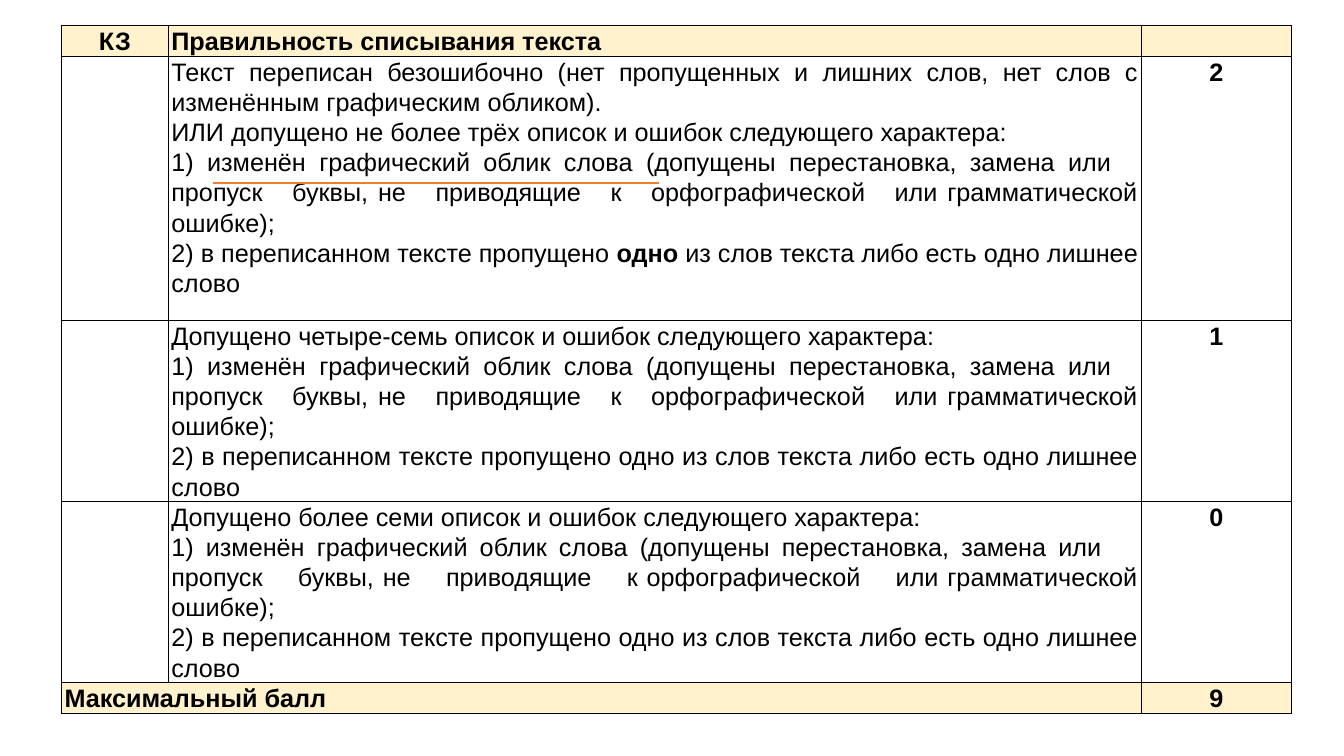
"""Builds a slide with the scoring table for copying a text accurately."""
from dataclasses import dataclass

from lxml.etree import SubElement
from pptx import Presentation
from pptx.dml.color import RGBColor
from pptx.enum.shapes import MSO_CONNECTOR
from pptx.enum.text import PP_ALIGN as Align
from pptx.oxml.ns import qn
from pptx.util import Inches, Pt


@dataclass(frozen=True)
class Theme:
    font: str = "Arial"
    size: float = 18
    spacing: float = 1.07
    ink: str = "000000"
    band: str = "FFF2CC"
    paper: str = "FFFFFF"
    accent: str = "ED7D31"
    border: float = 1
    underline: float = 1.5


THEME = Theme()

LETTERS = (
    "1) изменён графический облик слова (допущены перестановка, замена или   пропуск   буквы, "
    "не   приводящие   к   орфографической   или грамматической ошибке);"
)
LETTERS_WIDE = (
    "1) изменён графический облик слова (допущены перестановка, замена или    пропуск    буквы, "
    "не    приводящие    к орфографической    или грамматической ошибке);"
)
WORD_START = "2) в переписанном тексте пропущено "
WORD_KEY = "одно"
WORD_END = " из слов текста либо есть одно лишнее слово"
WORDS = WORD_START + WORD_KEY + WORD_END

CRITERIA = [
    ([
        "Текст переписан безошибочно (нет пропущенных и лишних слов, "
        "нет слов с изменённым графическим обликом).",
        "ИЛИ допущено не более трёх описок и ошибок следующего характера:",
        LETTERS,
        (WORD_START, WORD_KEY, WORD_END),
    ], "2"),
    (["Допущено четыре-семь описок и ошибок следующего характера:", LETTERS, WORDS], "1"),
    (["Допущено более семи описок и ошибок следующего характера:", LETTERS_WIDE, WORDS], "0"),
]
HEADER = ("КЗ", "Правильность списывания текста", "")
TOTAL = ("Максимальный балл", "9")

LEFT, TOP = 0.61, 0.25
COLUMNS = (1.06, 9.65, 1.49)
ROWS = (0.31, 2.62, 1.74, 1.74, 0.31)
UNDERLINE = (2.11, 6.54, 1.82)


def color(code):
    return RGBColor.from_string(code)


def add_borders(cell):
    properties = cell._tc.get_or_add_tcPr()
    for side in ("lnL", "lnR", "lnT", "lnB"):
        line = SubElement(properties, qn(f"a:{side}"), w=str(Pt(THEME.border)))
        fill = SubElement(line, qn("a:solidFill"))
        SubElement(fill, qn("a:srgbClr"), val=THEME.ink)


def style_cell(cell, fill):
    cell.margin_left = cell.margin_right = Inches(0.03)
    cell.margin_top = cell.margin_bottom = 0
    add_borders(cell)
    cell.fill.solid()
    cell.fill.fore_color.rgb = color(fill)


def write(cell, lines, align, bold):
    """Fill a cell; a tuple line holds plain, bold and plain spans."""
    frame = cell.text_frame
    for index, line in enumerate(lines):
        para = frame.add_paragraph() if index else frame.paragraphs[0]
        para.alignment = align
        para.line_spacing = THEME.spacing
        spans = line if isinstance(line, tuple) else (line,)
        for position, words in enumerate(spans):
            span = para.add_run()
            span.text = words
            span.font.name = THEME.font
            span.font.size = Pt(THEME.size)
            span.font.bold = bold or position == 1
            span.font.color.rgb = color(THEME.ink)


def add_scores(page):
    frame = page.shapes.add_table(
        len(ROWS), len(COLUMNS), Inches(LEFT), Inches(TOP),
        Inches(sum(COLUMNS)), Inches(sum(ROWS)),
    )
    table = frame.table
    table.first_row = table.horz_banding = False
    for column, width in zip(table.columns, COLUMNS):
        column.width = Inches(width)
    last = len(ROWS) - 1
    for number, (row, height) in enumerate(zip(table.rows, ROWS)):
        row.height = Inches(height)
        for cell in row.cells:
            style_cell(cell, THEME.band if number in (0, last) else THEME.paper)

    for column, (words, align) in enumerate(zip(HEADER, (Align.CENTER, Align.LEFT, Align.CENTER))):
        if words:
            write(table.cell(0, column), [words], align, True)
    for number, (lines, score) in enumerate(CRITERIA, 1):
        write(table.cell(number, 1), lines, Align.JUSTIFY, False)
        write(table.cell(number, 2), [score], Align.CENTER, True)
    table.cell(last, 0).merge(table.cell(last, 1))
    write(table.cell(last, 0), [TOTAL[0]], Align.LEFT, True)
    write(table.cell(last, 2), [TOTAL[1]], Align.CENTER, True)


def add_underline(page):
    start, end, height = map(Inches, UNDERLINE)
    line = page.shapes.add_connector(MSO_CONNECTOR.STRAIGHT, start, height, end, height)
    line.line.color.rgb = color(THEME.accent)
    line.line.width = Pt(THEME.underline)
    SubElement(line._element.spPr, qn("a:effectLst"))


def main():
    deck = Presentation()
    deck.slide_width, deck.slide_height = Inches(13.33), Inches(7.5)
    page = deck.slides.add_slide(deck.slide_layouts[6])
    add_scores(page)
    add_underline(page)
    deck.save("out.pptx")


if __name__ == "__main__":
    main()
